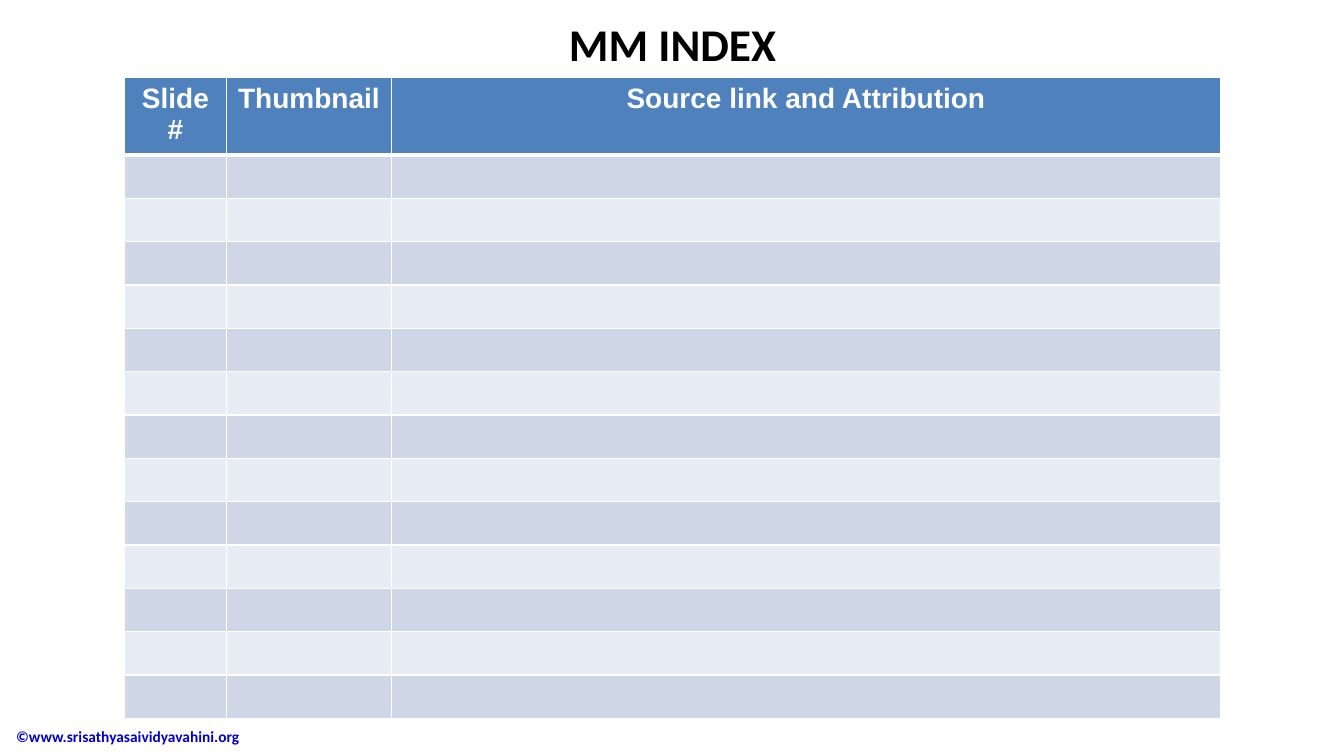
from lxml.etree import SubElement
from pptx import Presentation
from pptx.dml.color import RGBColor
from pptx.enum.text import MSO_ANCHOR, PP_ALIGN
from pptx.oxml.ns import qn
from pptx.util import Pt

PX = 9144  # 100 px to the inch
HEADINGS = ["Slide #", "Thumbnail", "Source link and Attribution"]
COLUMN_WIDTHS = [102, 163, 823]
ROWS, ROW_HEIGHT = 14, 43
HEADER_FILL, BAND_FILLS = "4F81BD", ["E8ECF4", "CFD7E7"]


def rgb(color):
    return RGBColor.from_string(color)


def write(tf, text, size, font, color, align=PP_ALIGN.LEFT, anchor=MSO_ANCHOR.TOP):
    """Put one bold line of text in a text frame."""
    tf.word_wrap = True
    tf.vertical_anchor = anchor
    p = tf.paragraphs[0]
    p.alignment = align
    r = p.add_run()
    r.text = text
    r.font.size, r.font.name, r.font.bold = Pt(size), font, True
    r.font.color.rgb = rgb(color)


def place(sp, x, y, w, h):
    sp.left, sp.top, sp.width, sp.height = (v * PX for v in (x, y, w, h))


def set_borders(cell, **widths):
    """Draw white cell borders, with widths in points for L, R, T and B."""
    tcPr = cell._tc.get_or_add_tcPr()
    for side, width in widths.items():
        ln = SubElement(tcPr, qn(f"a:ln{side}"), w=str(Pt(width)))
        SubElement(SubElement(ln, qn("a:solidFill")), qn("a:srgbClr"), val="FFFFFF")


def add_title(s, x, y, w, h):
    title = s.shapes.title
    place(title, x, y, w, h)
    write(title.text_frame, "MM INDEX", 32.4, "Calibri", "000000", PP_ALIGN.CENTER)


def add_index_table(s, x, y):
    frame = s.shapes.add_table(ROWS, len(HEADINGS), x * PX, y * PX,
                               sum(COLUMN_WIDTHS) * PX, ROWS * ROW_HEIGHT * PX)
    table = frame.table
    for column, width in zip(table.columns, COLUMN_WIDTHS):
        column.width = width * PX
    for i, row in enumerate(table.rows):
        row.height = ROW_HEIGHT * PX
        for cell in row.cells:
            set_borders(cell, L=1, R=1, T=3 if i == 1 else 1, B=3 if i == 0 else 1)
            cell.fill.solid()
            cell.fill.fore_color.rgb = rgb(BAND_FILLS[i % 2] if i else HEADER_FILL)
    for cell, heading in zip(table.rows[0].cells, HEADINGS):
        write(cell.text_frame, heading, 20, "Arial", "FFFFFF", PP_ALIGN.CENTER)


def add_copyright(s, x, y, w, h):
    sp = s.shapes.add_textbox(x * PX, y * PX, w * PX, h * PX)
    sp.text_frame.margin_left = 60 * PX
    write(sp.text_frame, "©www.srisathyasaividyavahini.org", 11, "Calibri", "0000CC",
          anchor=MSO_ANCHOR.MIDDLE)


def main():
    prs = Presentation()
    prs.slide_width, prs.slide_height = 1333 * PX, 750 * PX
    s = prs.slides.add_slide(prs.slide_layouts[5])
    add_copyright(s, -44, 710, 403, 41)
    add_title(s, 504, 11, 326, 55)
    add_index_table(s, 123, 77)
    prs.save("out.pptx")


if __name__ == "__main__":
    main()
